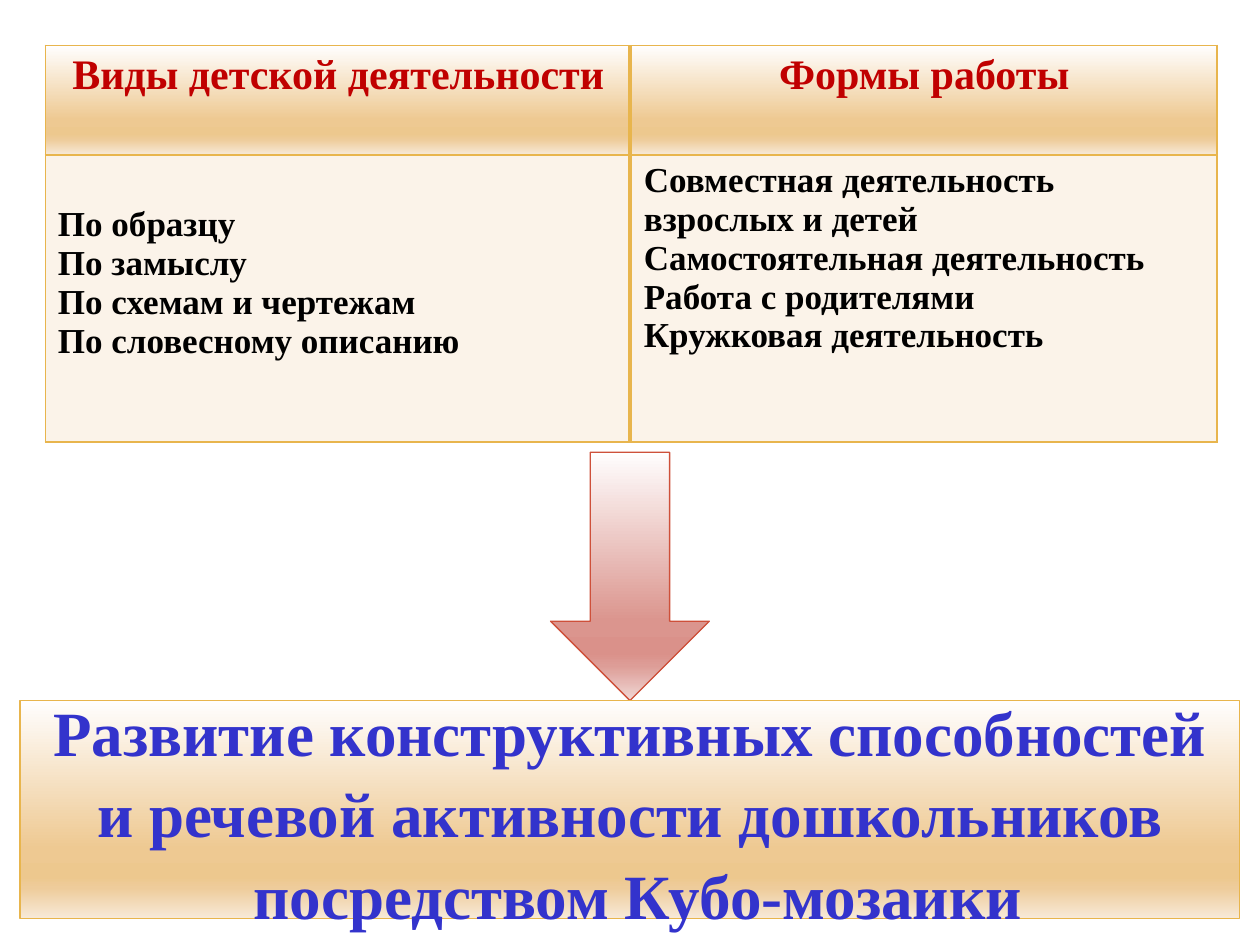
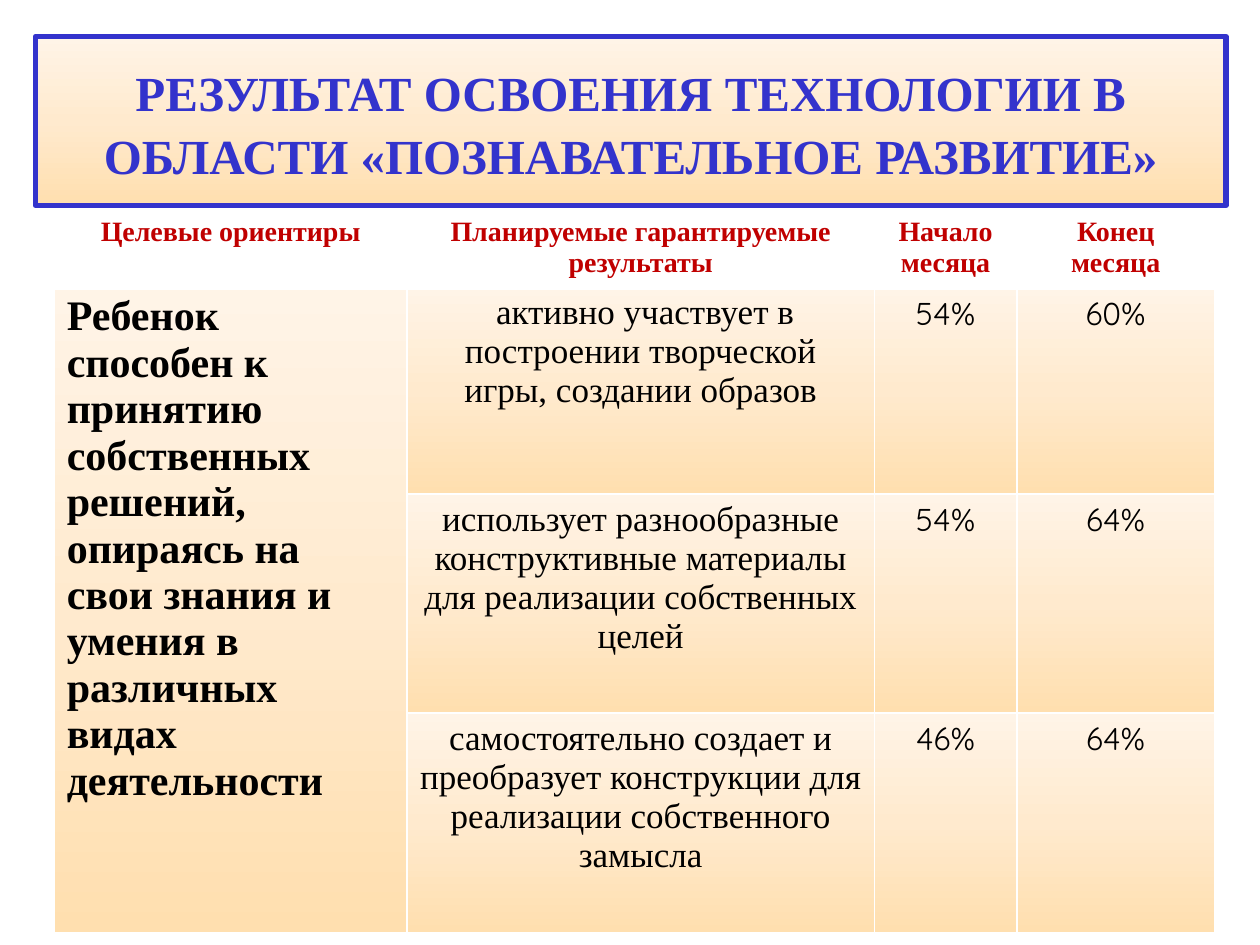
from lxml.etree import SubElement
from pptx import Presentation
from pptx.dml.color import RGBColor
from pptx.enum.shapes import MSO_CONNECTOR as Connector, MSO_SHAPE as Shape
from pptx.enum.text import MSO_ANCHOR as Anchor, PP_ALIGN as Align
from pptx.oxml.ns import qn
from pptx.util import Inches, Pt

SERIF = "Times New Roman"
NUMBERS = "Quicksand"
COLORS = {
    "heading": "C00000", "title": "3333CC", "text": "000000", "white": "FFFFFF",
    "gold": "E8B54D", "cream": "FBF3E9", "arrow": "CE503A",
}
GOLD_STOPS = [(0, "FFFEFE"), (68, "EEC992"), (81, "EDC88E"), (86, "EECC9B"), (100, "F7E9D7")]
RED_STOPS = [(0, "FFFEFE"), (68, "DB958E"), (81, "DA918A"), (86, "DD9D97"), (100, "F0D7D5")]
PEACH_STOPS = [(0, "FFF4E7"), (50, "FFEACE"), (100, "FFDFAF")]
BORDER_TAGS = ["a:lnL", "a:lnR", "a:lnT", "a:lnB"]


def color(name):
    """Return the RGB colour stored under a name."""
    return RGBColor.from_string(COLORS[name])


def fill_gradient(fill, properties, stops):
    """Fill downwards through (percent, hex colour) stops."""
    fill.gradient()
    gradient = properties.find(qn("a:gradFill"))
    gradient.find(qn("a:lin")).set("ang", str(90 * 60000))
    stop_list = gradient.find(qn("a:gsLst"))
    for stop in list(stop_list):
        stop_list.remove(stop)
    for percent, value in stops:
        stop = SubElement(stop_list, qn("a:gs"), pos=str(percent * 1000))
        SubElement(stop, qn("a:srgbClr"), val=value)


def write_text(frame, paragraphs, size, color_name, bold=True, font=SERIF,
               align=Align.CENTER, spacing=None):
    """Write paragraphs in one style."""
    frame.word_wrap = True
    frame.text = "\n".join(paragraphs)
    for paragraph in frame.paragraphs:
        paragraph.alignment = align
        paragraph.line_spacing = spacing
        paragraph.font.name = font
        paragraph.font.size = Pt(size)
        paragraph.font.bold = bold
        paragraph.font.color.rgb = color(color_name)


def style_shape(shape, stops, line_color, line_width):
    """Give a shape a gradient and an outline without a shadow."""
    shape.shadow.inherit = False
    fill_gradient(shape.fill, shape._element.spPr, stops)
    shape.line.color.rgb = color(line_color)
    shape.line.width = Pt(line_width)


def add_block(slide, kind, left, top, width, height, stops, line_color):
    """Add a thinly outlined gradient shape."""
    shape = slide.shapes.add_shape(kind, Inches(left), Inches(top), Inches(width), Inches(height))
    style_shape(shape, stops, line_color, 0.75)
    return shape


def add_grid(slide, left, top, columns, rows):
    """Add a table with given column widths and row heights."""
    frame = slide.shapes.add_table(len(rows), len(columns), Inches(left), Inches(top),
                                   Inches(sum(columns)), Inches(sum(rows)))
    table = frame.table
    table.first_row = table.horz_banding = False
    for column, width in zip(table.columns, columns):
        column.width = Inches(width)
    for row, height in zip(table.rows, rows):
        row.height = Inches(height)
    return table


def set_borders(cell, color_name, widths):
    """Draw cell borders from widths keyed by side letter (L, R, T, B)."""
    properties = cell._tc.get_or_add_tcPr()
    for tag in BORDER_TAGS:
        if tag[-1] in widths:
            line = SubElement(properties, qn(tag), w=str(Pt(widths[tag[-1]])))
            SubElement(SubElement(line, qn("a:solidFill")), qn("a:srgbClr"), val=COLORS[color_name])


def fill_cell(cell, stops):
    """Fill a table cell with a gradient."""
    fill_gradient(cell.fill, cell._tc.get_or_add_tcPr(), stops)


def add_divider(slide, x, top, bottom):
    """Add a vertical gold line."""
    line = slide.shapes.add_connector(Connector.STRAIGHT, Inches(x), Inches(top),
                                      Inches(x), Inches(bottom))
    line.line.color.rgb = color("gold")
    line.line.width = Pt(2)
    SubElement(line._element.spPr, qn("a:effectLst"))


def add_activity_slide(presentation):
    """Build the slide on activities, forms of work and their goal."""
    slide = presentation.slides.add_slide(presentation.slide_layouts[6])
    table = add_grid(slide, 0.36, 0.36, [4.65, 4.65], [0.87, 2.28])
    headings = ["Виды детской деятельности", "Формы работы"]
    lists = [
        ["По образцу", "По замыслу", "По схемам и чертежам", "По словесному описанию"],
        ["Совместная деятельность взрослых и детей", "Самостоятельная деятельность",
         "Работа с родителями", "Кружковая деятельность"],
    ]
    for column, (heading, items, side) in enumerate(zip(headings, lists, "LR")):
        header, body = table.cell(0, column), table.cell(1, column)
        for cell in (header, body):
            set_borders(cell, "gold", {side: 1, "T": 1, "B": 1})
        fill_cell(header, GOLD_STOPS)
        write_text(header.text_frame, [heading], 24, "heading")
        body.fill.solid()
        body.fill.fore_color.rgb = color("cream")
        write_text(body.text_frame, items, 20, "text", align=Align.LEFT)
    table.cell(1, 0).margin_top = Inches(0.4)

    add_block(slide, Shape.DOWN_ARROW, 4.37, 3.59, 1.26, 1.97, RED_STOPS, "arrow")
    goal = add_block(slide, Shape.RECTANGLE, 0.16, 5.56, 9.68, 1.73, GOLD_STOPS, "gold")
    goal.text_frame.vertical_anchor = Anchor.MIDDLE
    write_text(goal.text_frame,
               ["Развитие конструктивных способностей и речевой активности дошкольников",
                " посредством Кубо-мозаики"], 36, "title", spacing=1.08)
    add_divider(slide, 5, 0.36, 3.51)


def add_result_slide(presentation):
    """Build the slide with the results table."""
    slide = presentation.slides.add_slide(presentation.slide_layouts[5])
    title = slide.shapes.title
    title.left, title.top = Inches(0.28), Inches(0.29)
    title.width, title.height = Inches(9.45), Inches(1.34)
    style_shape(title, PEACH_STOPS, "title", 3)
    title.text_frame.vertical_anchor = Anchor.MIDDLE
    write_text(title.text_frame,
               ["РЕЗУЛЬТАТ ОСВОЕНИЯ ТЕХНОЛОГИИ В ОБЛАСТИ «ПОЗНАВАТЕЛЬНОЕ РАЗВИТИЕ»"],
               28, "title", spacing=1.08)

    headings = ["Целевые ориентиры", "Планируемые гарантируемые результаты",
                "Начало месяца", "Конец месяца"]
    target = ("Ребенок способен к принятию собственных решений, опираясь на свои "
              "знания и умения в различных видах деятельности")
    results = [
        (" активно участвует в построении творческой игры, создании образов", "54%", "60%"),
        ("использует разнообразные конструктивные материалы для реализации собственных целей",
         "54%", "64%"),
        ("самостоятельно создает и преобразует конструкции для реализации собственного замысла",
         "46%", "64%"),
    ]
    table = add_grid(slide, 0.43, 1.67, [2.8, 3.71, 1.13, 1.57], [0.61, 1.64, 1.74, 1.74])
    for column, heading in enumerate(headings):
        cell = table.cell(0, column)
        set_borders(cell, "white", {"L": 1, "R": 1, "T": 1, "B": 3})
        cell.fill.background()
        write_text(cell.text_frame, [heading], 16, "heading")
        for row in range(1, len(results) + 1):
            cell = table.cell(row, column)
            set_borders(cell, "white", dict.fromkeys("LRTB", 1))
            fill_cell(cell, PEACH_STOPS)
    table.cell(1, 0).merge(table.cell(len(results), 0))
    write_text(table.cell(1, 0).text_frame, [target], 24, "text", align=Align.LEFT)
    for row, (result, *shares) in enumerate(results, 1):
        write_text(table.cell(row, 1).text_frame, [result], 20, "text", bold=False)
        for column, share in enumerate(shares, 2):
            write_text(table.cell(row, column).text_frame, [share], 18, "text",
                       bold=False, font=NUMBERS)


def main():
    """Build and save the presentation."""
    presentation = Presentation()
    presentation.slide_width, presentation.slide_height = Inches(10), Inches(7.5)
    add_activity_slide(presentation)
    add_result_slide(presentation)
    presentation.save("out.pptx")


if __name__ == "__main__":
    main()
